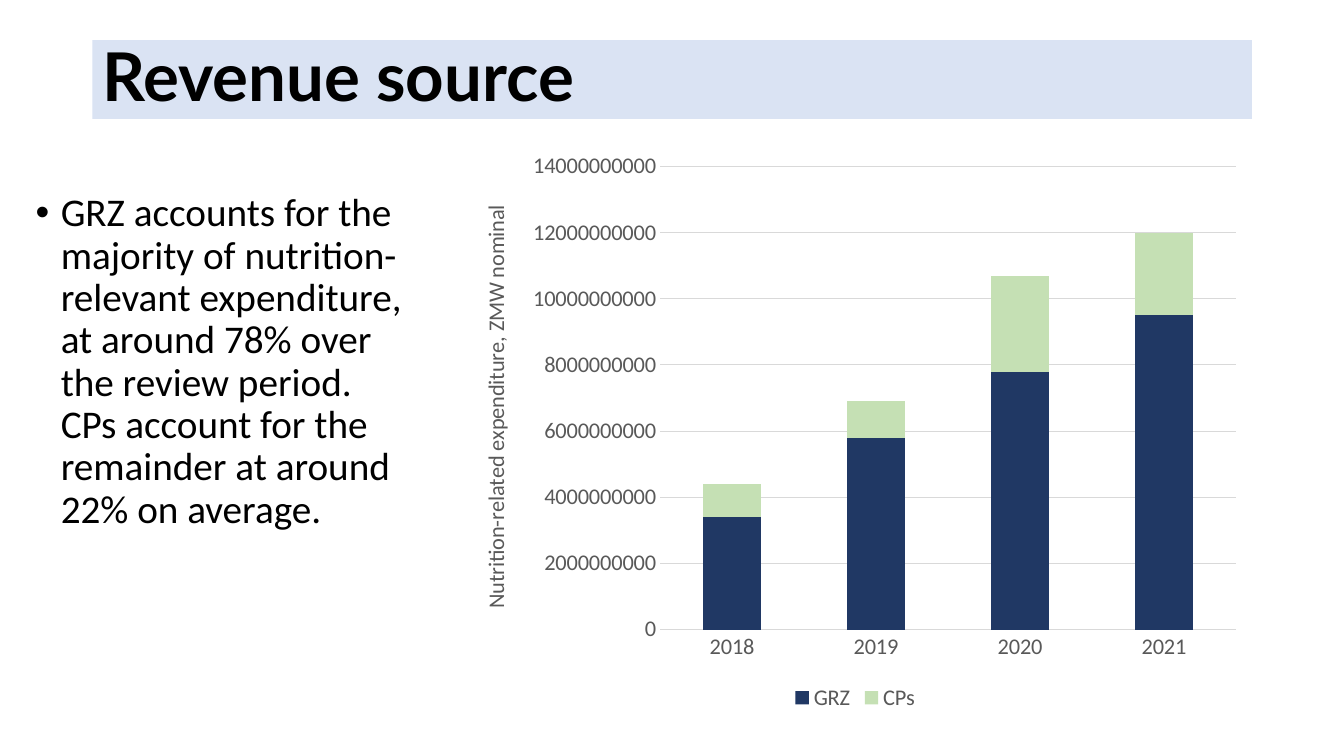
from lxml import etree
from pptx import Presentation
from pptx import util as u
from pptx.chart.data import CategoryChartData
from pptx.dml.color import RGBColor
from pptx.enum import chart as charts, shapes, text
from pptx.oxml.ns import qn

BLACK, GREY, RULE = "000000", "595959", "D9D9D9"
YEARS = ["2018", "2019", "2020", "2021"]
REVENUE = [
    ("GRZ", "203864", [3400000000, 5800000000, 7800000000, 9500000000]),
    ("CPs", "C5E0B4", [1000000000, 1100000000, 2900000000, 2500000000]),
]


def color(value):
    return RGBColor.from_string(value)


def style_font(font, name="Calibri", size=16, fill=GREY, bold=False):
    font.name = name
    font.size = u.Pt(size)
    font.bold = bold
    font.color.rgb = color(fill)


def write(frame, content, anchor=text.MSO_ANCHOR.TOP, before=0, **font):
    frame.word_wrap = True
    frame.vertical_anchor = anchor
    paragraph = frame.paragraphs[0]
    paragraph.alignment = text.PP_ALIGN.LEFT
    paragraph.line_spacing = 0.9
    paragraph.space_before = u.Pt(before)
    run = paragraph.add_run()
    run.text = content
    style_font(run.font, **font)
    return paragraph


def add_bullet(paragraph, indent):
    properties = paragraph._p.get_or_add_pPr()
    properties.set("marL", str(u.Pt(indent)))
    properties.set("indent", str(-u.Pt(indent)))
    etree.SubElement(properties, qn("a:buFont")).set("typeface", "Arial")
    etree.SubElement(properties, qn("a:buChar")).set("char", "•")


def add_title(slide, content, box):
    banner = slide.shapes.add_shape(shapes.MSO_SHAPE.RECTANGLE, *map(u.Pt, box))
    banner.shadow.inherit = False
    banner.fill.solid()
    banner.fill.fore_color.rgb = color("DAE3F3")
    banner.line.fill.background()
    write(banner.text_frame, content, anchor=text.MSO_ANCHOR.MIDDLE,
          name="Lato", size=48, fill=BLACK, bold=True)


def add_body(slide, content, box):
    body = slide.shapes.add_textbox(*map(u.Pt, box))
    paragraph = write(body.text_frame, content, before=10, size=28, fill=BLACK)
    add_bullet(paragraph, 18)


def style_line(line, value):
    line.color.rgb = color(value)
    line.width = u.Pt(0.75)


def style_axes(chart, title):
    for axis in (chart.category_axis, chart.value_axis):
        axis.major_tick_mark = axis.minor_tick_mark = charts.XL_TICK_MARK.NONE
        style_font(axis.tick_labels.font)
    style_line(chart.category_axis.format.line, RULE)

    values = chart.value_axis
    values.minimum_scale, values.maximum_scale = 0, 14000000000
    values.major_unit = 2000000000
    values.tick_labels.number_format = "General"
    values.tick_labels.number_format_is_linked = False
    values.format.line.fill.background()
    values.has_major_gridlines = True
    style_line(values.major_gridlines.format.line, RULE)
    frame = values.axis_title.text_frame
    frame.text = title
    style_font(frame.paragraphs[0].runs[0].font)


def add_revenue_chart(slide, title, box):
    data = CategoryChartData()
    data.categories = YEARS
    for name, _, values in REVENUE:
        data.add_series(name, values)
    chart = slide.shapes.add_chart(
        charts.XL_CHART_TYPE.COLUMN_STACKED, *map(u.Pt, box), data).chart
    style_font(chart.font, fill=BLACK)
    chart.has_title = False
    chart.has_legend = True
    chart.legend.position = charts.XL_LEGEND_POSITION.BOTTOM
    chart.legend.include_in_layout = False
    style_font(chart.legend.font)
    style_axes(chart, title)

    plot = chart.plots[0]
    plot.gap_width, plot.overlap = 150, 100
    plot.vary_by_categories = False
    for series, (_, fill, _) in zip(plot.series, REVENUE):
        series.format.fill.solid()
        series.format.fill.fore_color.rgb = color(fill)


def main():
    presentation = Presentation()
    presentation.slide_width, presentation.slide_height = u.Pt(960), u.Pt(540)
    slide = presentation.slides.add_slide(presentation.slide_layouts[6])
    add_title(slide, "Revenue source", (66, 28.75, 828.2, 56.25))
    add_body(slide, "GRZ accounts for the majority of nutrition-relevant expenditure, "
             "at around 78% over the review period.  CPs account for the remainder "
             "at around 22% on average.", (18.3, 134.3, 291.6, 342.7))
    add_revenue_chart(slide, "Nutrition-related expenditure, ZMW nominal",
                      (327.6, 101, 566.6, 410.4))
    presentation.save("out.pptx")


if __name__ == "__main__":
    main()
